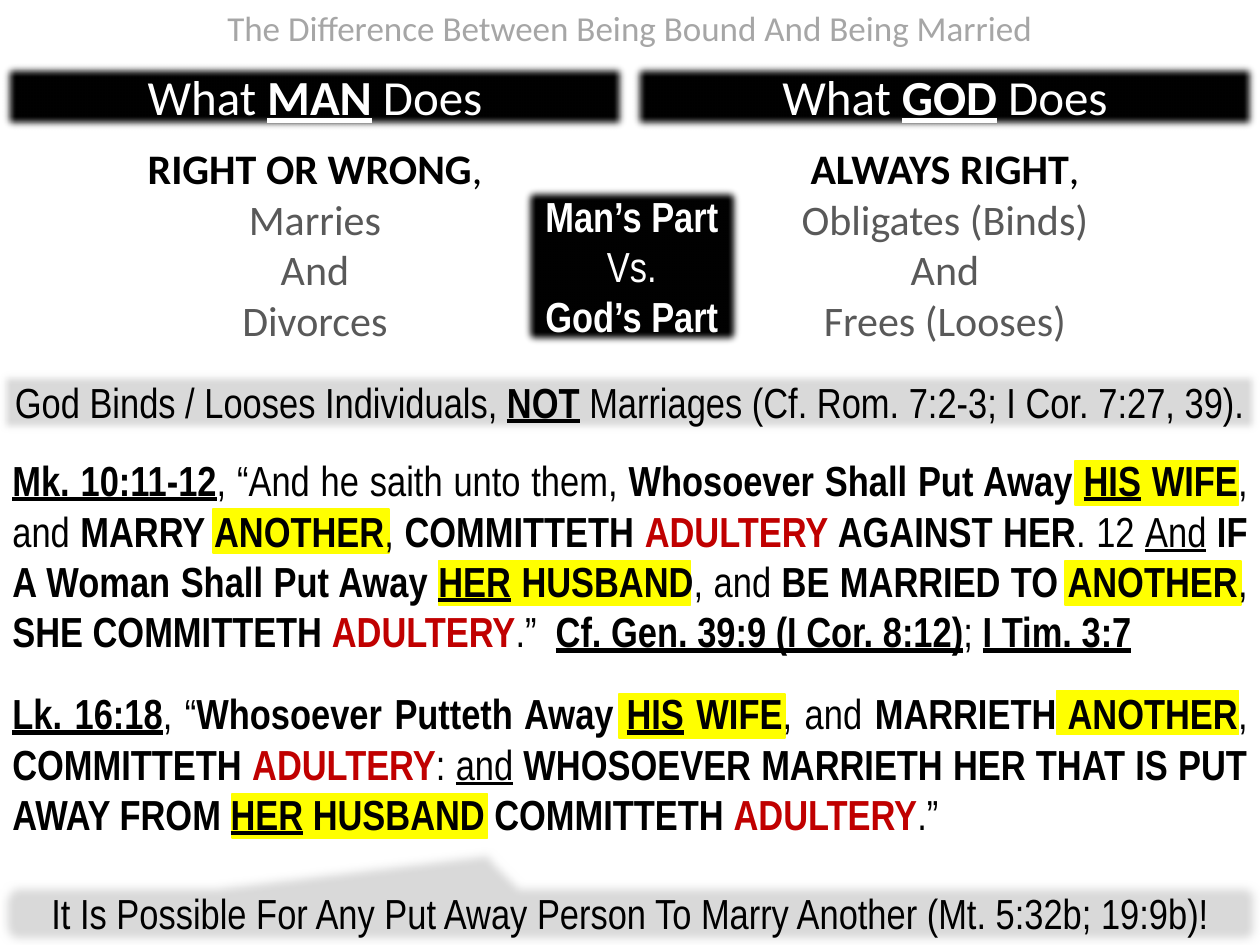
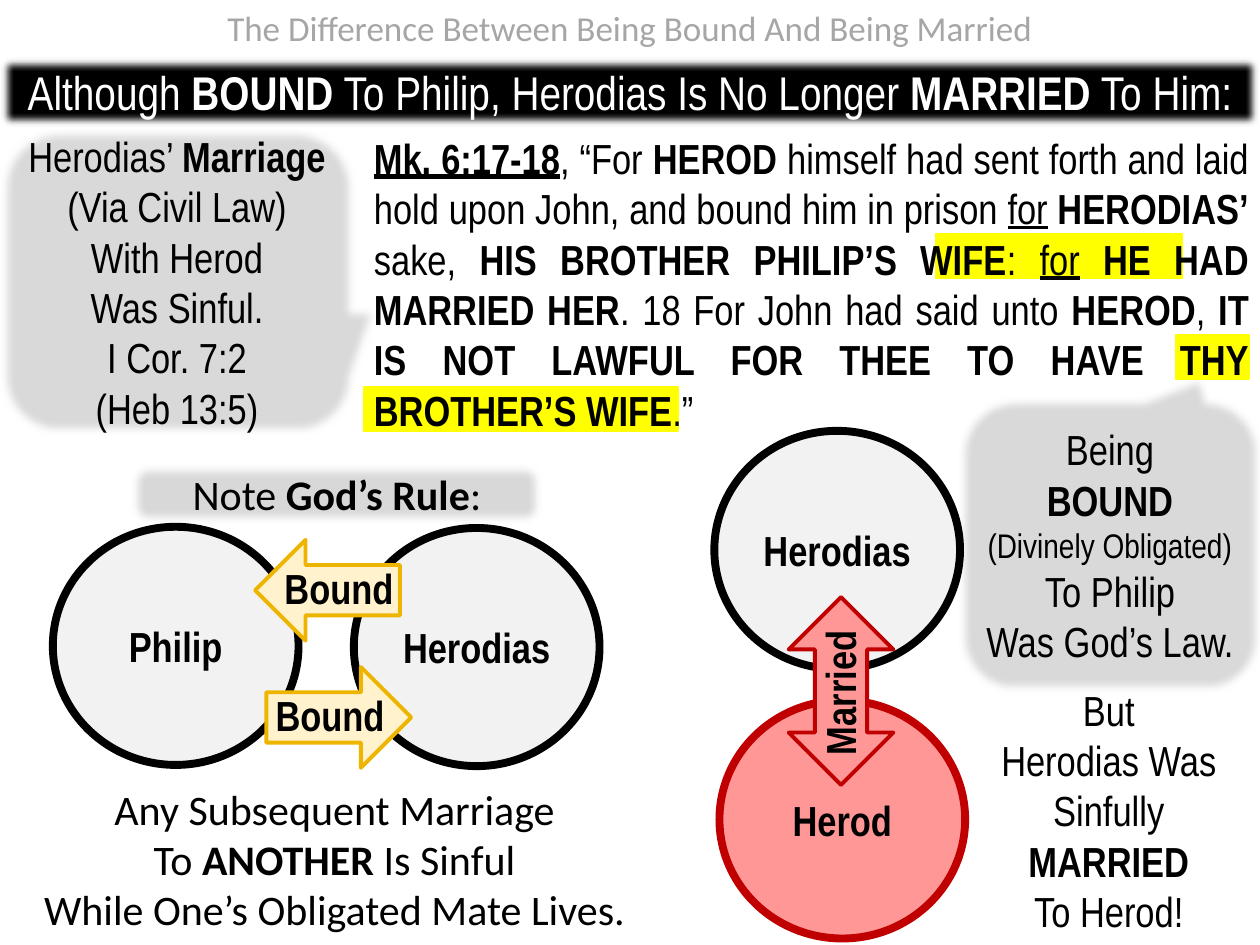
from collections import namedtuple

from lxml import etree
from pptx import Presentation
from pptx.dml.color import RGBColor
from pptx.enum.shapes import MSO_SHAPE
from pptx.enum.text import MSO_ANCHOR, PP_ALIGN
from pptx.oxml.ns import qn
from pptx.util import Pt

COLORS = {
    "black": "000000", "white": "FFFFFF", "title": "A6A6A6", "muted": "595959",
    "band": "D9D9D9", "band_line": "FBE5D6", "highlight": "FFFF00",
    "circle": "F2F2F2", "sin": "FF9797", "red": "C00000",
    "bound": "FFF2CC", "bound_line": "EEB500",
}
NARROW, SANS = "Arial Narrow", "Calibri"
RECTANGLE, ROUNDED = MSO_SHAPE.RECTANGLE, MSO_SHAPE.ROUNDED_RECTANGLE
CALLOUT, ELLIPSE = MSO_SHAPE.ROUNDED_RECTANGULAR_CALLOUT, MSO_SHAPE.OVAL
LEFT_ARROW, RIGHT_ARROW = MSO_SHAPE.LEFT_ARROW, MSO_SHAPE.RIGHT_ARROW
UP_DOWN_ARROW = MSO_SHAPE.UP_DOWN_ARROW
CENTER, JUSTIFY = PP_ALIGN.CENTER, PP_ALIGN.JUSTIFY
TOP, MIDDLE = MSO_ANCHOR.TOP, MSO_ANCHOR.MIDDLE

SOFT_EDGE = 5
HIGHLIGHT_HEIGHT = 25.2
CIRCLE_WIDTH, CIRCLE_HEIGHT = 140.4, 136.1

Box = namedtuple("Box", "left top width height")


def rgb(name):
    return RGBColor.from_string(COLORS[name])


def inside(box, left, top, width, height):
    return Box(box.left + left, box.top + top, width, height)


def lengths(box):
    return [Pt(value) for value in box]


def write(shape, runs, font=NARROW, size=24, color="black", align=CENTER,
          anchor=TOP, side_inset=7.2):
    """Runs are strings or (text, style, size); b bold, u underlined, r red, m muted."""
    frame = shape.text_frame
    frame.word_wrap = True
    frame.vertical_anchor = anchor
    frame.margin_left = frame.margin_right = Pt(side_inset)
    paragraph = frame.paragraphs[0]
    paragraph.alignment = align
    for item in runs:
        text, style, run_size = (*((item,) if isinstance(item, str) else item), "", size)[:3] \
            if isinstance(item, str) or len(item) == 3 else (*item, size)
        for number, line in enumerate(text.split("\n")):
            if number:
                paragraph.add_line_break()
            if not line:
                continue
            run = paragraph.add_run()
            run.text = line
            run.font.name, run.font.size = font, Pt(run_size)
            run.font.bold, run.font.underline = "b" in style, "u" in style
            name = "red" if "r" in style else "muted" if "m" in style else color
            run.font.color.rgb = rgb(name)


def add_text(slide, box, runs, **options):
    shape = slide.shapes.add_textbox(*lengths(box))
    write(shape, runs, **options)
    return shape


def add_panel(slide, kind, box, fill, line=None, line_width=1, soft=False):
    shape = slide.shapes.add_shape(kind, *lengths(box))
    shape.fill.solid()
    shape.fill.fore_color.rgb = rgb(fill)
    if line:
        shape.line.color.rgb = rgb(line)
        shape.line.width = Pt(line_width)
    else:
        shape.line.fill.background()
    shape.shadow.inherit = False
    if soft:
        effects = shape._element.spPr.find(qn("a:effectLst"))
        etree.SubElement(effects, qn("a:softEdge"), rad=str(Pt(SOFT_EDGE)))
    return shape


def band(slide, box, runs, fill="black", color="white", kind=RECTANGLE, **options):
    shape = add_panel(slide, kind, box, fill, soft=True)
    write(shape, runs, color=color, **options)


def callout(slide, box, pointer, runs):
    shape = add_panel(slide, CALLOUT, box, "band", "band_line", soft=True)
    shape.adjustments[0], shape.adjustments[1] = pointer
    write(shape, runs, anchor=MIDDLE, side_inset=0)


def circle(slide, box, left, top, name, fill="circle", line="black"):
    shape = add_panel(slide, ELLIPSE, inside(box, left, top, CIRCLE_WIDTH, CIRCLE_HEIGHT),
                      fill, line, 4.5)
    write(shape, [(name, "b")], anchor=MIDDLE, side_inset=0)


def passage(slide, box, highlights, runs):
    """Justified verse over highlights given as (left, top, width) within the box."""
    for left, top, width in highlights:
        add_panel(slide, RECTANGLE, inside(box, left, top, width, HIGHLIGHT_HEIGHT),
                  "highlight", "highlight")
    add_text(slide, box, runs, align=JUSTIFY)


def new_slide(presentation):
    slide = presentation.slides.add_slide(presentation.slide_layouts[6])
    add_text(slide, Box(0, 0, 720, 31.7),
             ["The Difference Between Being Bound And Being Married"],
             font=SANS, size=20, color="title")
    return slide


def part_column(slide, box, who, verdict, deeds):
    band(slide, inside(box, 0, 0, box.width, 41),
         ["What ", (who, "bu"), " Does"], font=SANS, size=28)
    add_text(slide, inside(box, 0, 43.5, box.width, box.height - 43.5),
             [(verdict, "b"), ",\n", (deeds, "m")], font=SANS)


def bound_pair(slide, box):
    circle(slide, box, 0, 0, "Philip")
    circle(slide, box, 172, 0.7, "Herodias")
    arrows = [(RIGHT_ARROW, 122, 80.2, -5), (LEFT_ARROW, 115.6, 7.5, 6.5)]
    for kind, left, top, label_shift in arrows:
        arrow = inside(box, left, top, 82.8, 57.6)
        add_panel(slide, kind, arrow, "bound", "bound_line", 2.25)
        add_text(slide, inside(arrow, label_shift, 9.3, arrow.width, 36),
                 [("Bound", "b")], side_inset=0)


def married_pair(slide, box):
    circle(slide, box, 0, 0, "Herodias")
    circle(slide, box, 2.9, 154, "Herod", "sin", "red")
    arrow = inside(box, 42.5, 95, 59.8, 107.3)
    add_panel(slide, UP_DOWN_ARROW, arrow, "sin", "red", 2.25)
    label = add_text(slide, inside(arrow, -69, 36.7, 195.8, 36), [("Married", "b")])
    label.rotation = 270


def build_parts_slide(presentation):
    slide = new_slide(presentation)
    part_column(slide, Box(0, 34.6, 360, 167.5), "MAN", "RIGHT OR WRONG",
                "Marries\nAnd\nDivorces")
    part_column(slide, Box(360, 34.6, 360, 167.5), "GOD", "ALWAYS RIGHT",
                "Obligates (Binds)\nAnd\nFrees (Looses)")
    band(slide, Box(-0.7, 211.7, 720.7, 36),
         ["God Binds / Looses Individuals, ", ("NOT", "bu"),
          " Marriages (Cf. Rom. 7:2-3; I Cor. 7:27, 39)."], "band", "black")
    callout(slide, Box(0, 503.3, 720, 36.7), (-0.11, -1.03),
            ["It Is Possible For Any Put Away Person To Marry Another (Mt. 5:32b; 19:9b)!"])
    band(slide, Box(296.6, 105.1, 128.9, 94.3),
         [("Man’s Part\n", "b"), "Vs.\n", ("God’s Part", "b")])
    passage(slide, Box(0, 256.3, 720, 123.8),
            [(614.2, 7.2, 93.6), (121.7, 34.6, 100.8), (250.6, 64.1, 144), (608.4, 64.1, 100.8)],
            [("Mk. 10:11-12", "bu"), ", “And he saith unto them, ",
             ("Whosoever Shall Put Away ", "b"), ("HIS", "bu"), (" WIFE", "b"), ", and ",
             ("MARRY ANOTHER", "b"), ", ", ("COMMITTETH ", "b"), ("ADULTERY", "br"),
             (" AGAINST HER", "b"), ". 12 ", ("And", "u"), " ",
             ("IF A Woman Shall Put Away ", "b"), ("HER", "bu"), (" HUSBAND", "b"), ", and ",
             ("BE MARRIED TO ANOTHER", "b"), ", ", ("SHE COMMITTETH ", "b"),
             ("ADULTERY", "br"), ".”  ", ("Cf. Gen. 39:9 (I Cor. 8:12)", "bu"), "; ",
             ("I Tim. 3:7", "bu")])
    passage(slide, Box(0, 389.5, 720, 94.3),
            [(604.1, 5.1, 103.7), (353.5, 7.2, 95), (132.5, 64.1, 146.2)],
            [("Lk. 16:18", "bu"), ", “", ("Whosoever Putteth Away ", "b"), ("HIS", "bu"),
             (" WIFE", "b"), ", and ", ("MARRIETH ANOTHER", "b"), ", ", ("COMMITTETH ", "b"),
             ("ADULTERY", "br"), ": ", ("and", "u"), " ",
             ("WHOSOEVER MARRIETH HER THAT IS PUT AWAY FROM ", "b"), ("HER", "bu"),
             (" HUSBAND COMMITTETH ", "b"), ("ADULTERY", "br"), ".”"])


def build_herodias_slide(presentation):
    slide = new_slide(presentation)
    band(slide, Box(0, 32.4, 720, 40.3),
         ["Although ", ("BOUND", "b"), " To Philip, Herodias Is No Longer ",
          ("MARRIED", "b"), " To Him:"], size=27)
    callout(slide, Box(547.9, 226.8, 172.8, 169.2), (0.31, -0.59),
            ["Being\n", ("BOUND\n", "b"), ("(Divinely Obligated)\n", "", 19.5),
             "To Philip\nWas God’s Law."])
    callout(slide, Box(0, 73.4, 202.3, 175), (0.58, 0.07),
            ["Herodias’ ", ("Marriage\n", "b"),
             "(Via Civil Law)\nWith Herod\nWas Sinful.\nI Cor. 7:2\n(Heb 13:5)"])
    add_text(slide, Box(-14.4, 439.2, 411.1, 103),
             ["Any Subsequent Marriage\nTo ", ("ANOTHER ", "b"),
              "Is Sinful\nWhile One’s Obligated Mate Lives."], font=SANS, anchor=MIDDLE)
    add_text(slide, Box(547.2, 387.4, 172.8, 152.6),
             ["But\nHerodias Was\nSinfully\n", ("MARRIED\n", "b"), "To Herod!"])
    band(slide, Box(74.9, 265, 235.4, 34.6), ["Note ", ("God’s Rule", "b"), ":"],
         "band", "black", ROUNDED, font=SANS, anchor=MIDDLE)
    bound_pair(slide, Box(30.2, 301, 312.4, 137.8))
    passage(slide, Box(206.6, 72, 514.1, 181.4),
            [(1.5, 149, 179.3), (328.4, 61.9, 140.4), (465.2, 119.5, 41.8)],
            [("Mk. 6:17-18", "bu"), ", “For ", ("HEROD", "b"),
             " himself had sent forth and laid hold upon John, and bound him in prison ",
             ("for", "u"), " ", ("HERODIAS’", "b"), " sake, ",
             ("HIS BROTHER PHILIP’S WIFE", "b"), ": ", ("for", "u"), " ",
             ("HE HAD MARRIED HER", "b"), ". 18 For John had said unto ", ("HEROD", "b"), ", ",
             ("IT IS NOT LAWFUL FOR THEE TO HAVE THY BROTHER’S WIFE", "b"), ".”"])
    married_pair(slide, Box(408.2, 246.2, 143.3, 290.1))


def main():
    presentation = Presentation()
    presentation.slide_width, presentation.slide_height = Pt(720), Pt(540)
    build_parts_slide(presentation)
    build_herodias_slide(presentation)
    presentation.save("out.pptx")


if __name__ == "__main__":
    main()
